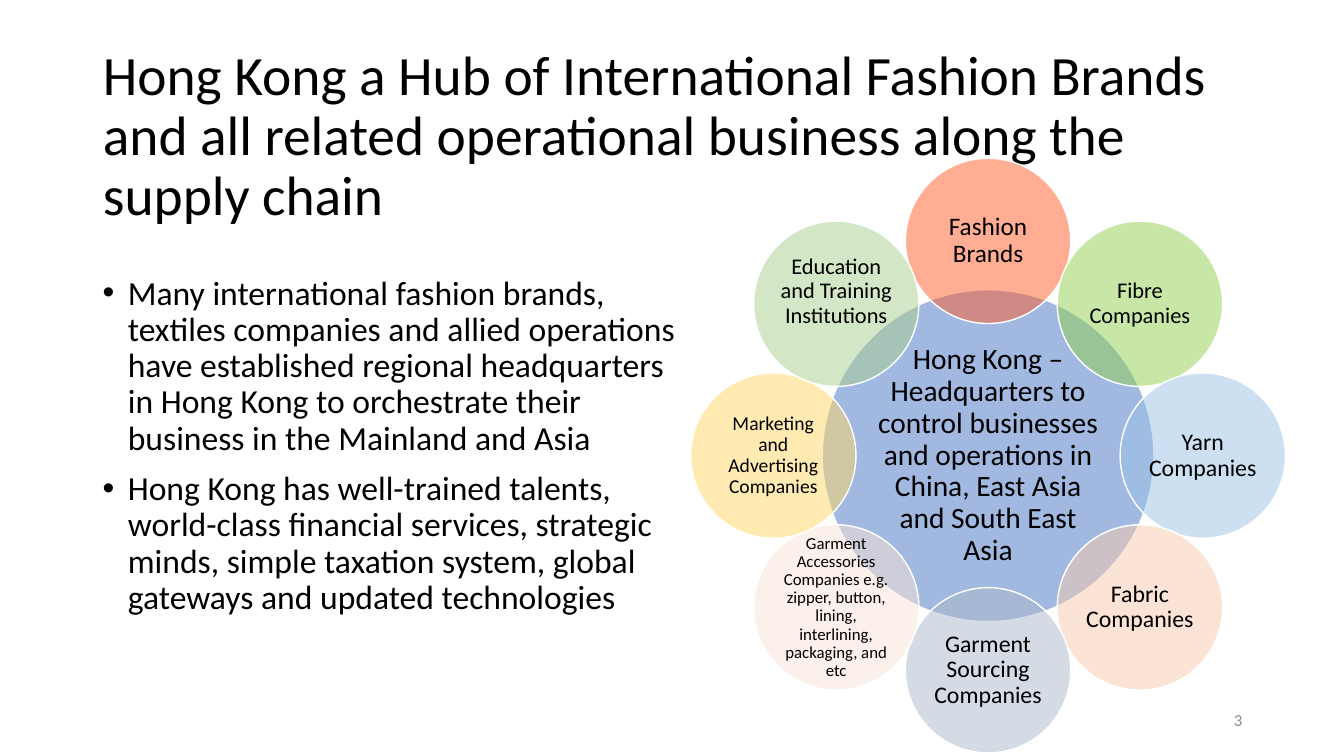
from dataclasses import dataclass
from math import cos, radians, sin

from lxml import etree
from pptx import Presentation
from pptx.dml.color import RGBColor
from pptx.enum.shapes import MSO_SHAPE
from pptx.enum.text import MSO_ANCHOR, MSO_AUTO_SIZE, PP_ALIGN
from pptx.oxml.ns import qn
from pptx.util import Inches, Pt


@dataclass(frozen=True)
class Theme:
    font: str = "Calibri"
    text: str = "000000"
    muted: str = "8C8C8C"
    outline: str = "FFFFFF"
    hub: str = "4472C4"
    title_size: float = 39.6
    body_size: float = 24
    hub_size: float = 21
    number_size: float = 12
    line_spacing: float = 0.9


THEME = Theme()

TITLE = ("Hong Kong a Hub of International Fashion Brands and all related "
         "operational business along the supply chain")
POINTS = [
    "Many international fashion brands, textiles companies and allied operations have "
    "established regional headquarters in Hong Kong to orchestrate their business in "
    "the Mainland and Asia",
    "Hong Kong has well-trained talents, world-class financial services, strategic "
    "minds, simple taxation system, global gateways and updated technologies",
]
HUB = ("Hong Kong – Headquarters to control businesses and operations in China, "
       "East Asia and South East Asia")
# Clockwise from the top: label, fill, type size, upward shift of the label in inches
SECTORS = [
    ("Fashion Brands", "FF5E2A", 18, 0),
    ("Fibre Companies", "92D050", 16, 0),
    ("Yarn Companies", "9DC3E6", 17, 0),
    ("Fabric Companies", "F8CBAD", 17, 0),
    ("Garment Sourcing Companies", "ADB9CA", 17, 0),
    ("Garment Accessories Companies e.g. zipper, button, lining, interlining, "
     "packaging, and etc", "FBE5D6", 12, 0),
    ("Marketing and Advertising Companies", "FFD966", 14, 0),
    ("Education and Training Institutions", "A9D18E", 16, 0.12),
]
CENTER_X, CENTER_Y = 9.8, 4.52
ORBIT = 2.13
HUB_DIAMETER, SECTOR_DIAMETER = 3.29, 1.64


def style(paragraph, size, color=THEME.text, align=PP_ALIGN.LEFT):
    paragraph.alignment = align
    paragraph.line_spacing = THEME.line_spacing
    paragraph.font.name = THEME.font
    paragraph.font.size = Pt(size)
    paragraph.font.color.rgb = RGBColor.from_string(color)


def add_bullet(paragraph, indent):
    properties = paragraph._p.get_or_add_pPr()
    properties.set("marL", str(indent))
    properties.set("indent", str(-indent))
    etree.SubElement(properties, qn("a:buFont")).set("typeface", "Arial")
    etree.SubElement(properties, qn("a:buChar")).set("char", "•")


def set_title(slide):
    title = slide.shapes.title
    title.left, title.top = Inches(0.92), Inches(0.64)
    title.width, title.height = Inches(11.5), Inches(1.45)
    frame = title.text_frame
    frame.text = TITLE
    frame.auto_size = MSO_AUTO_SIZE.NONE
    frame.vertical_anchor = MSO_ANCHOR.MIDDLE
    style(frame.paragraphs[0], THEME.title_size)


def add_points(slide):
    frame = slide.shapes.add_textbox(
        Inches(0.92), Inches(2.69), Inches(6.04), Inches(4.05)).text_frame
    frame.word_wrap = True
    for index, point in enumerate(POINTS):
        paragraph = frame.add_paragraph() if index else frame.paragraphs[0]
        paragraph.text = point
        add_bullet(paragraph, Inches(0.25))
        if index:
            paragraph.space_before = Pt(10)
        style(paragraph, THEME.body_size)


def add_circle(slide, x, y, diameter, label, fill, size, lift=0):
    """Add a half-transparent labelled circle centred on x, y."""
    circle = slide.shapes.add_shape(
        MSO_SHAPE.OVAL, Inches(x - diameter / 2), Inches(y - diameter / 2),
        Inches(diameter), Inches(diameter))
    circle.shadow.inherit = False
    circle.fill.solid()
    circle.fill.fore_color.rgb = RGBColor.from_string(fill)
    color = circle.fill._xPr.find(qn("a:solidFill"))[0]
    etree.SubElement(color, qn("a:alpha")).set("val", "50000")
    circle.line.color.rgb = RGBColor.from_string(THEME.outline)
    circle.line.width = Pt(1)
    frame = circle.text_frame
    frame.word_wrap = True
    frame.vertical_anchor = MSO_ANCHOR.MIDDLE
    frame.margin_left = frame.margin_right = frame.margin_top = Inches(0.02)
    frame.margin_bottom = Inches(0.02 + 2 * lift)
    frame.text = label
    style(frame.paragraphs[0], size, align=PP_ALIGN.CENTER)


def add_supply_chain(slide):
    add_circle(slide, CENTER_X, CENTER_Y, HUB_DIAMETER, HUB, THEME.hub, THEME.hub_size)
    for index, sector in enumerate(SECTORS):
        angle = radians(index * 360 / len(SECTORS) - 90)
        add_circle(slide, CENTER_X + ORBIT * cos(angle), CENTER_Y + ORBIT * sin(angle),
                   SECTOR_DIAMETER, *sector)


def add_slide_number(slide, number):
    frame = slide.shapes.add_textbox(
        Inches(9.42), Inches(6.95), Inches(3), Inches(0.4)).text_frame
    frame.word_wrap = True
    frame.vertical_anchor = MSO_ANCHOR.MIDDLE
    frame.text = number
    style(frame.paragraphs[0], THEME.number_size, THEME.muted, PP_ALIGN.RIGHT)


def main():
    deck = Presentation()
    deck.slide_width, deck.slide_height = Inches(13.33), Inches(7.5)
    slide = deck.slides.add_slide(deck.slide_layouts.get_by_name("Title Only"))
    set_title(slide)
    add_points(slide)
    add_supply_chain(slide)
    add_slide_number(slide, "3")
    deck.save("out.pptx")


if __name__ == "__main__":
    main()
